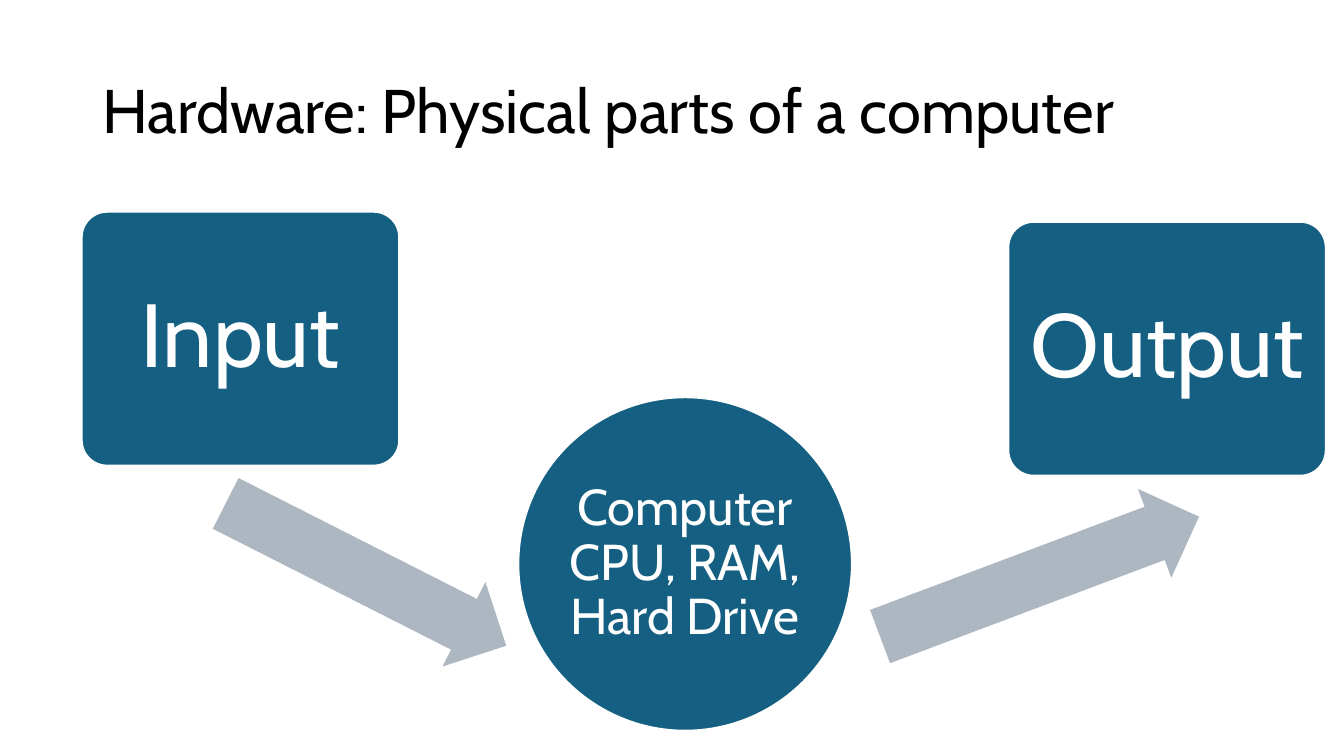
from dataclasses import dataclass

from pptx import Presentation
from pptx.dml.color import RGBColor
from pptx.enum.shapes import MSO_SHAPE as SHAPE
from pptx.enum.text import MSO_ANCHOR as ANCHOR, PP_ALIGN as ALIGN
from pptx.util import Inches, Pt


@dataclass(frozen=True)
class Theme:
    """Colours, font and type sizes of the slide."""
    font: str = "Cabin"
    ink: str = "000000"
    paper: str = "FFFFFF"
    node: str = "156082"
    arrow: str = "ACB7C1"
    title: int = 44
    stage: int = 64
    detail: int = 36
    outline: float = 1.5


THEME = Theme()


def set_text(tf, text, size, color, align, insets):
    """Fill a text frame with one vertically centred paragraph."""
    left, top = map(Inches, insets)
    frame = {"word_wrap": True, "vertical_anchor": ANCHOR.MIDDLE,
             "margin_left": left, "margin_right": left,
             "margin_top": top, "margin_bottom": top}
    for name, value in frame.items():
        setattr(tf, name, value)
    p = tf.paragraphs[0]
    p.text, p.alignment, p.line_spacing = text, align, 0.9
    for r in p.runs:
        for name, value in {"name": THEME.font, "size": Pt(size)}.items():
            setattr(r.font, name, value)
        r.font.color.rgb = RGBColor.from_string(color)


def add_filled(s, kind, box, fill, adjustments=()):
    """Add a flat preset shape without an outline."""
    sp = s.shapes.add_shape(kind, *map(Inches, box))
    sp.shadow.inherit = False
    sp.fill.solid()
    sp.fill.fore_color.rgb = RGBColor.from_string(fill)
    sp.line.fill.background()
    for i, value in enumerate(adjustments):
        sp.adjustments[i] = value
    return sp


def add_node(s, kind, box, text, size, insets, adjustments=()):
    """Add a labelled node with a white outline."""
    sp = add_filled(s, kind, box, THEME.node, adjustments)
    sp.line.color.rgb = RGBColor.from_string(THEME.paper)
    sp.line.width = Pt(THEME.outline)
    set_text(sp.text_frame, text, size, THEME.paper, ALIGN.CENTER, insets)


def add_title(s, box, text):
    """Add the slide title."""
    tf = s.shapes.add_textbox(*map(Inches, box)).text_frame
    set_text(tf, text, THEME.title, THEME.ink, ALIGN.LEFT, (0.1, 0.05))


def add_flow(s, box):
    """Add the input, computer and output nodes joined by arrows."""
    x, y, w, h = box
    stage_w, stage_h, circle = 3.15, 2.52, 3.31
    add_node(s, SHAPE.OVAL, (x + 4.33, y + h - circle, circle, circle),
             "Computer\vCPU, RAM, Hard Drive", THEME.detail, (0, 0.03))
    stages = [("Input", x, y), ("Output", x + w - stage_w, y + 0.1)]
    for text, left, top in stages:
        add_node(s, SHAPE.ROUNDED_RECTANGLE, (left, top, stage_w, stage_h),
                 text, THEME.stage, (0.13, 0.13), (0.1,))
    arrows = [(1.26, 3.13, 3.12, 206.9), (7.81, 3.15, 3.38, 159.4)]
    for dx, dy, length, angle in arrows:
        sp = add_filled(s, SHAPE.LEFT_ARROW, (x + dx, y + dy, length, 0.94),
                        THEME.arrow, (0.6, 0.5))
        sp.rotation = angle


def main():
    """Build and save the presentation."""
    prs = Presentation()
    prs.slide_width, prs.slide_height = Inches(13.33), Inches(7.5)
    s = prs.slides.add_slide(prs.slide_layouts[6])
    add_title(s, (0.92, 0.4, 11.5, 1.45), "Hardware: Physical parts of a computer")
    add_flow(s, (0.81, 2.1, 12.34, 5.15))
    prs.save("out.pptx")


if __name__ == "__main__":
    main()
